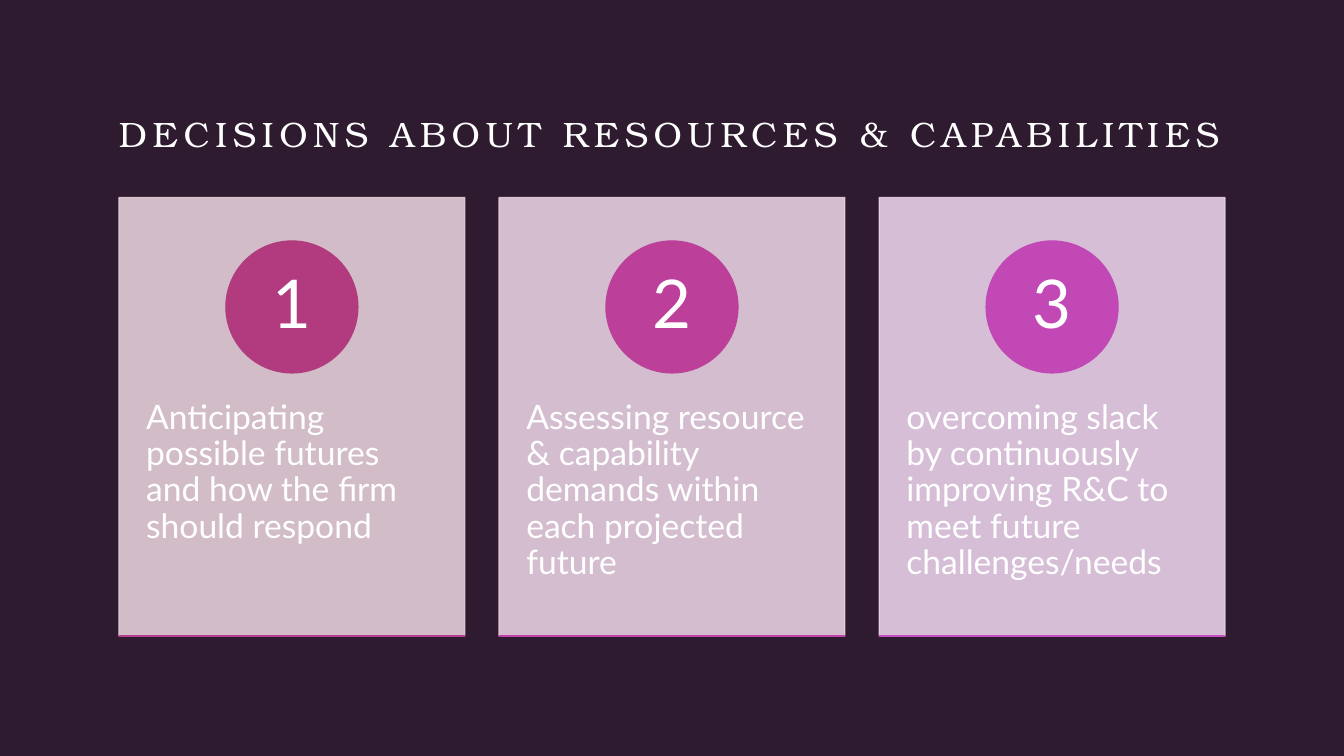
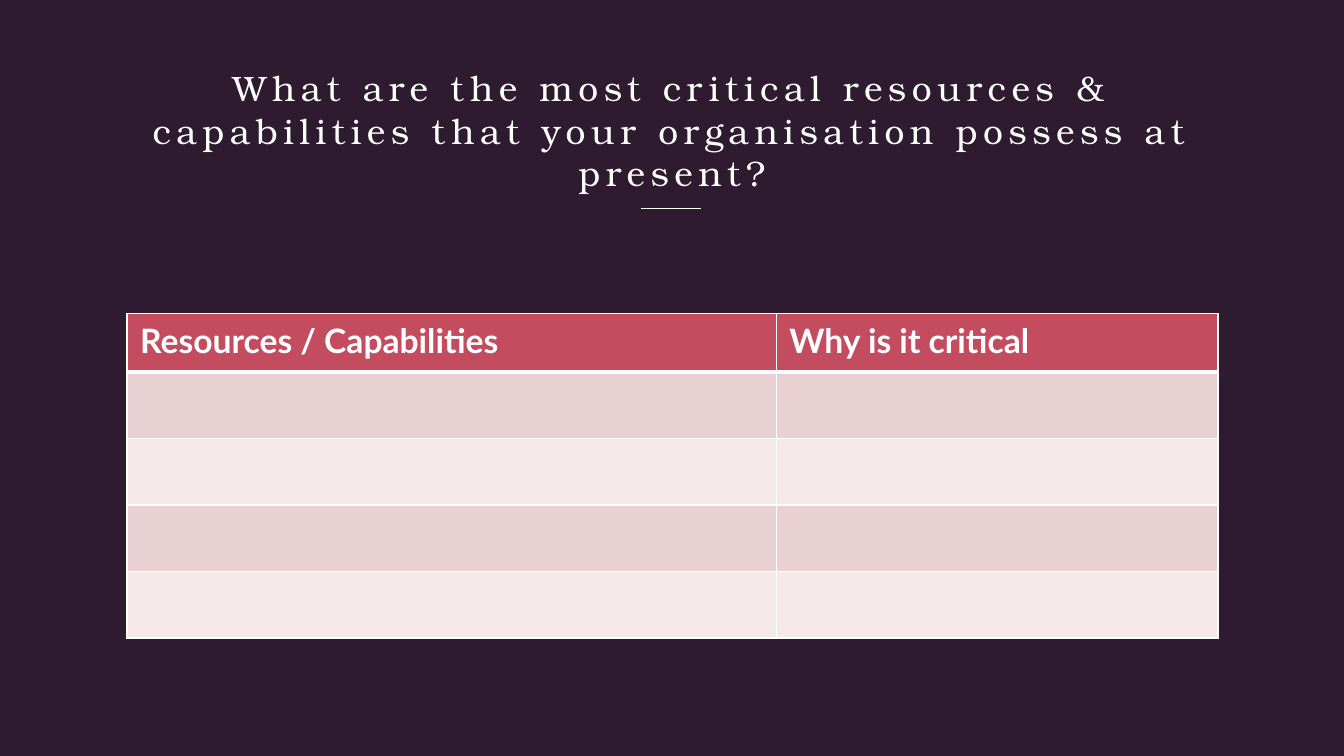
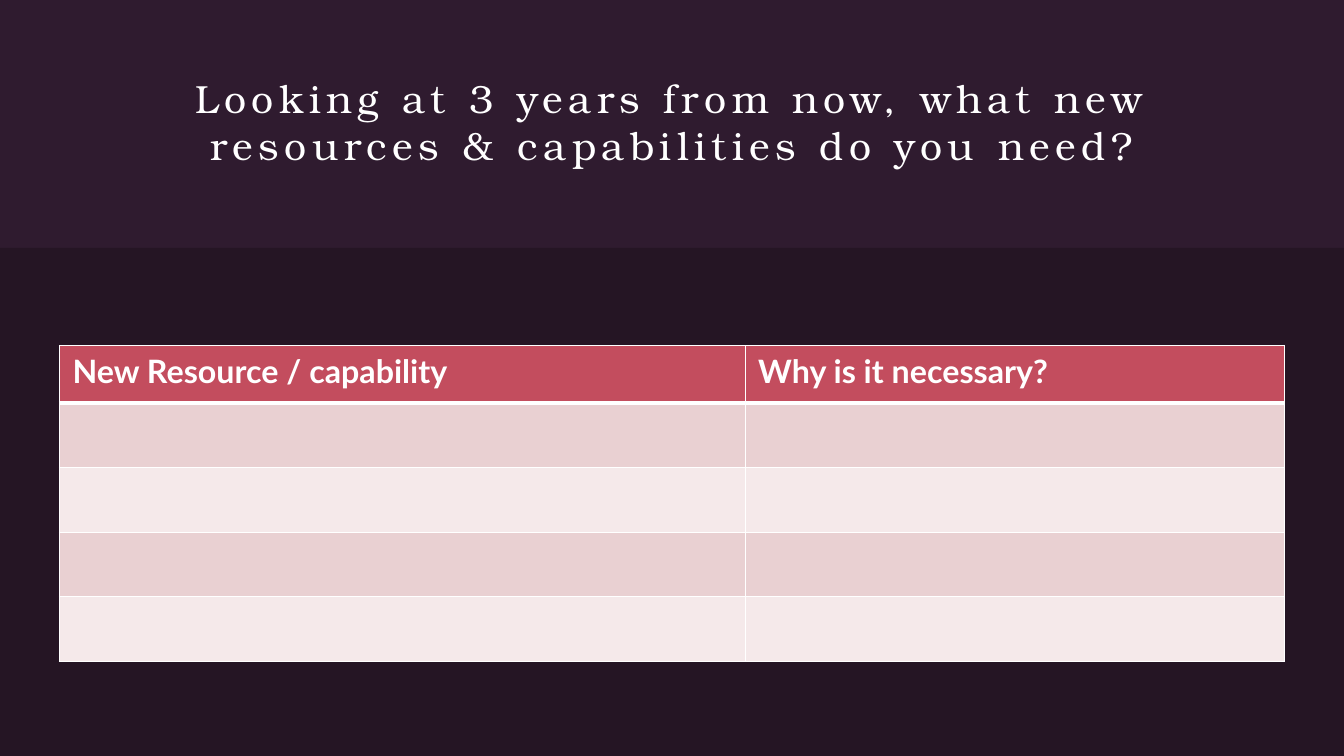
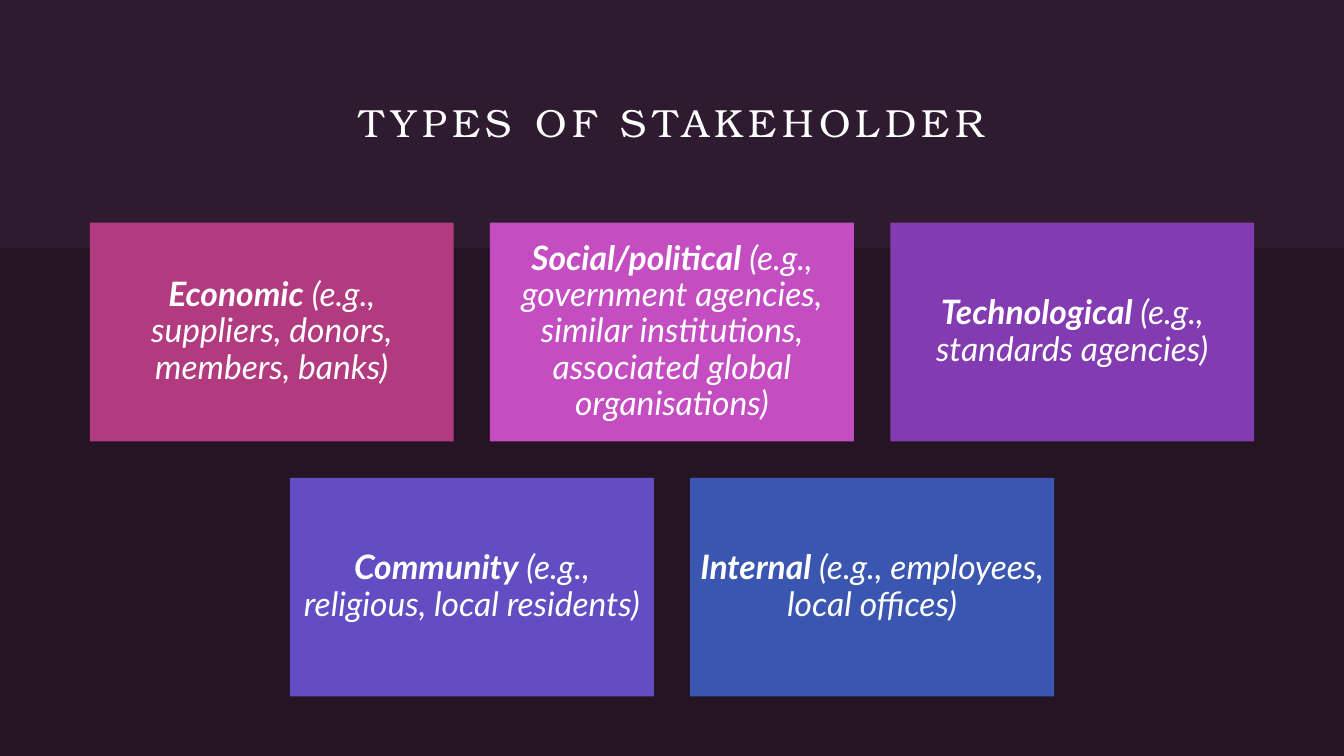
from lxml.etree import SubElement
from pptx import Presentation
from pptx.dml.color import RGBColor
from pptx.enum.shapes import MSO_CONNECTOR, MSO_SHAPE
from pptx.enum.text import MSO_ANCHOR as ANCHOR, PP_ALIGN as ALIGN
from pptx.oxml.ns import qn
from pptx.util import Inches, Pt

SLIDE_WIDTH = 13.33
SLIDE_HEIGHT = 7.5
BACKGROUND = "2F1B2F"
BAND = "251524"
WHITE = "FFFFFF"
HEADER_FILL = "C34D5E"
ROW_FILLS = ("E9D0D2", "F5E9EA")
TITLE_FONT = "TeX Gyre Bonum"
BODY_FONT = "Lato"


def paint(target, color):
    target.solid()
    target.fore_color.rgb = RGBColor.from_string(color)


def set_alpha(fill, percent):
    color = fill._xPr.find(qn("a:solidFill"))[0]
    SubElement(color, qn("a:alpha"), val=str(percent * 1000))


def write(frame, spans, size=24, font=BODY_FONT, align=ALIGN.LEFT, anchor=ANCHOR.TOP,
          margins=(0, 0, 0, 0), line_spacing=None, bold=False, italic=False, tracking=0):
    frame.word_wrap = True
    frame.vertical_anchor = anchor
    (frame.margin_left, frame.margin_top,
     frame.margin_right, frame.margin_bottom) = map(Inches, margins)
    para = frame.paragraphs[0]
    para.alignment = align
    para.line_spacing = line_spacing
    if isinstance(spans, str):
        spans = [(spans, bold)]
    for text, is_bold in spans:
        span = para.add_run()
        span.text = text
        span.font.size = Pt(size)
        span.font.name = font
        span.font.bold = is_bold
        span.font.italic = italic
        span.font.color.rgb = RGBColor.from_string(WHITE)
        if tracking:
            span._r.get_or_add_rPr().set("spc", str(tracking * 100))


def set_borders(cell, bottom):
    properties = cell._tc.get_or_add_tcPr()
    for tag, width in (("a:lnL", 1), ("a:lnR", 1), ("a:lnT", 1), ("a:lnB", bottom)):
        line = SubElement(properties, qn(tag), w=str(Pt(width)))
        SubElement(SubElement(line, qn("a:solidFill")), qn("a:srgbClr"), val=WHITE)


class SlideBuilder:
    def __init__(self):
        self.deck = Presentation()
        self.deck.slide_width = Inches(SLIDE_WIDTH)
        self.deck.slide_height = Inches(SLIDE_HEIGHT)
        paint(self.deck.slide_master.background.fill, BACKGROUND)
        self.page = None

    def new_page(self):
        self.page = self.deck.slides.add_slide(self.deck.slide_layouts[6])

    def title(self, text, top, height, size=28, align=ALIGN.CENTER, anchor=ANCHOR.MIDDLE):
        box = self.page.shapes.add_textbox(
            Inches(1.18), Inches(top), Inches(10.97), Inches(height))
        write(box.text_frame, text, size=size, font=TITLE_FONT, align=align,
              anchor=anchor, tracking=4)

    def shape(self, kind, left, top, width, height, color, alpha=None, outlined=False):
        shape = self.page.shapes.add_shape(
            kind, Inches(left), Inches(top), Inches(width), Inches(height))
        shape.shadow.inherit = False
        paint(shape.fill, color)
        if outlined:
            paint(shape.line.fill, color)
            shape.line.width = Pt(0.85)
        else:
            shape.line.fill.background()
        if alpha:
            set_alpha(shape.fill, alpha)
            if outlined:
                set_alpha(shape.line.fill, alpha)
        return shape

    def rule(self, left, top, width, color, weight):
        line = self.page.shapes.add_connector(
            MSO_CONNECTOR.STRAIGHT, Inches(left), Inches(top),
            Inches(left + width), Inches(top))
        paint(line.line.fill, color)
        line.line.width = Pt(weight)
        SubElement(line._element.spPr, qn("a:effectLst"))

    def lower_band(self):
        self.shape(MSO_SHAPE.RECTANGLE, 0, 2.46, SLIDE_WIDTH, SLIDE_HEIGHT - 2.46, BAND)

    def card(self, left, number, text, card_color, circle_color, rule_color):
        top, width, height, diameter = 1.96, 3.43, 4.35, 1.31
        card = self.shape(MSO_SHAPE.RECTANGLE, left, top, width, height, card_color,
                          alpha=90, outlined=True)
        write(card.text_frame, text, margins=(0.27, 2.01, 0.27, 0.36), line_spacing=0.9)
        circle = self.shape(MSO_SHAPE.OVAL, left + (width - diameter) / 2, top + 0.43,
                            diameter, diameter, circle_color, outlined=True)
        write(circle.text_frame, number, size=48, align=ALIGN.CENTER, anchor=ANCHOR.MIDDLE,
              margins=(0.1, 0.01, 0.1, 0.01), line_spacing=0.9)
        self.rule(left, top + height, width, rule_color, 0.85)

    def tile_row(self, top, tiles):
        width, height, gap = 3.61, 2.17, 0.36
        left = (SLIDE_WIDTH - len(tiles) * (width + gap) + gap) / 2
        for index, (name, examples, color) in enumerate(tiles):
            tile = self.shape(MSO_SHAPE.RECTANGLE, left + index * (width + gap), top,
                              width, height, color)
            write(tile.text_frame, [(name, True), (f" {examples}", False)],
                  align=ALIGN.CENTER, anchor=ANCHOR.MIDDLE, margins=(0.1,) * 4,
                  line_spacing=0.9, italic=True)

    def blank_table(self, left, top, headers, widths, header_height, row_height, size, padding):
        heights = [header_height] + [row_height] * 4
        table = self.page.shapes.add_table(
            len(heights), len(widths), Inches(left), Inches(top),
            Inches(sum(widths)), Inches(sum(heights))).table
        for column, width in zip(table.columns, widths):
            column.width = Inches(width)
        for index, (row, height) in enumerate(zip(table.rows, heights)):
            row.height = Inches(height)
            for cell in row.cells:
                set_borders(cell, 1 if index else 3)
                paint(cell.fill, ROW_FILLS[(index - 1) % 2] if index else HEADER_FILL)
        for cell, text in zip(table.rows[0].cells, headers):
            write(cell.text_frame, text, size=size, bold=True)
            cell.margin_left = cell.margin_right = Inches(0.13)
            cell.margin_top = cell.margin_bottom = Inches(padding)
            cell.vertical_anchor = ANCHOR.TOP


def main():
    builder = SlideBuilder()

    builder.new_page()
    builder.title("DECISIONS ABOUT RESOURCES & CAPABILITIES", 1.11, 0.72, size=25.2,
                  align=ALIGN.LEFT, anchor=ANCHOR.TOP)
    cards = [
        ("Anticipating possible futures and how the firm should respond",
         "E4CED8", "B13B7E", "B63D8C"),
        ("Assessing resource & capability demands within each projected future",
         "E7CFE0", "BC3F9A", "C042A9"),
        ("overcoming slack by continuously improving R&C to meet future challenges/needs",
         "E9D0E9", "C148B5", "C34DC1"),
    ]
    for index, card in enumerate(cards):
        builder.card(1.18 + index * 3.77, str(index + 1), *card)

    builder.new_page()
    builder.title("What are the most critical resources & capabilities that your "
                  "organisation possess at present?", 0.58, 1.34, size=25.2,
                  anchor=ANCHOR.BOTTOM)
    builder.rule(6.36, 2.07, 0.59, WHITE, 1)
    builder.blank_table(1.26, 3.11, ("Resources / Capabilities", "Why is it critical"),
                        (6.44, 4.38), 0.58, 0.66, size=24, padding=0.07)

    builder.new_page()
    builder.title("Looking at 3 years from now, what new resources & capabilities "
                  "do you need?", 0.59, 1.23)
    builder.lower_band()
    builder.blank_table(0.59, 3.43, ("New Resource / capability", "Why is it necessary?"),
                        (6.8, 5.35), 0.57, 0.64, size=23, padding=0.06)

    builder.new_page()
    builder.title("TYPES OF STAKEHOLDER", 0.59, 1.23)
    builder.lower_band()
    builder.tile_row(2.21, [
        ("Economic", "(e.g., suppliers, donors, members, banks)", "B13B7E"),
        ("Social/political", "(e.g., government agencies, similar institutions, "
         "associated global organisations)", "C34DC1"),
        ("Technological", "(e.g., standards agencies)", "823BB1"),
    ])
    builder.tile_row(4.74, [
        ("Community", "(e.g., religious, local residents)", "634DC3"),
        ("Internal", "(e.g., employees, local offices)", "3B56B1"),
    ])

    builder.deck.save("out.pptx")


if __name__ == "__main__":
    main()
